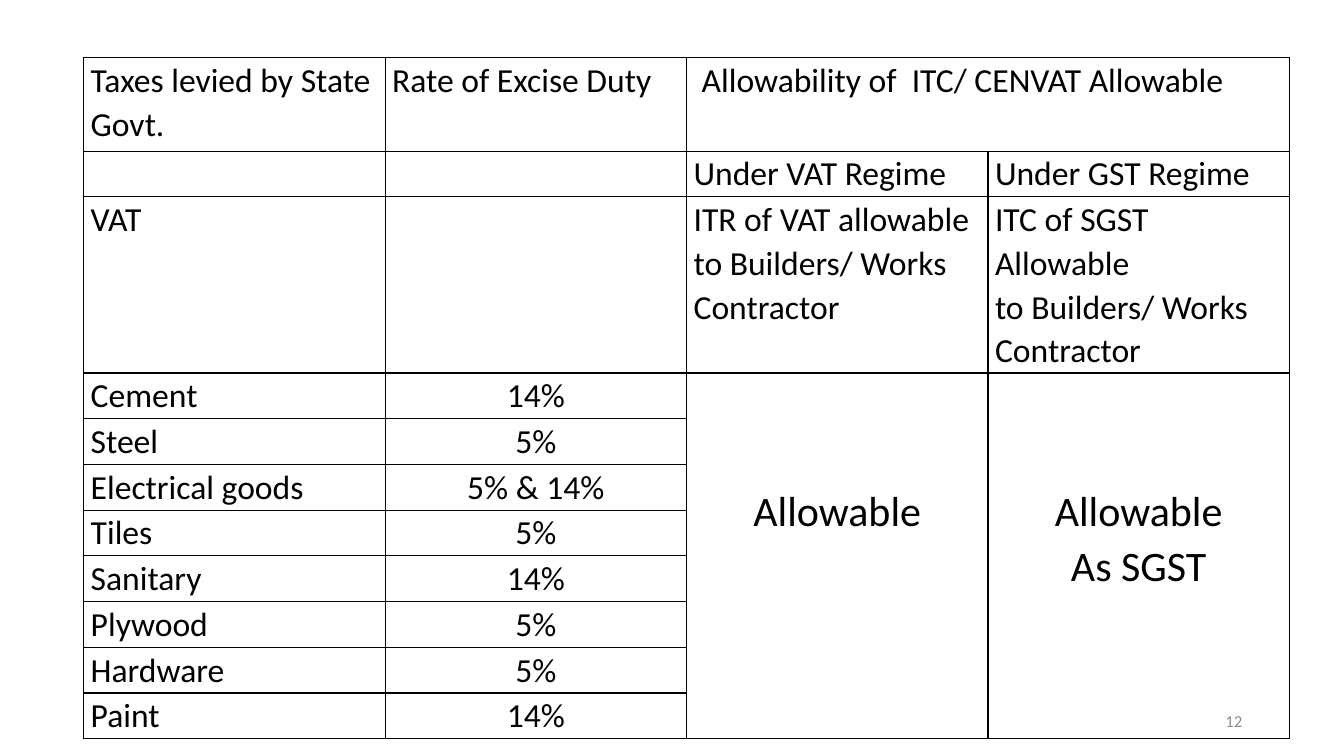
from lxml import etree
from pptx import Presentation
from pptx.dml.color import RGBColor
from pptx.enum.text import MSO_ANCHOR, PP_ALIGN
from pptx.oxml.ns import qn
from pptx.util import Inches, Pt

LEFT, CENTER, RIGHT = PP_ALIGN.LEFT, PP_ALIGN.CENTER, PP_ALIGN.RIGHT
MIDDLE = MSO_ANCHOR.MIDDLE

BLACK, GRAY = "000000", "8C8C8C"
HEADINGS = [
    ["Taxes levied by State Govt.", "Rate of Excise Duty",
     "Allowability of  ITC/ CENVAT Allowable", ""],
    ["", "", "Under VAT Regime", "Under GST Regime"],
    ["VAT", "", "ITR of VAT allowable to Builders/ Works Contractor",
     "ITC of SGST Allowable\nto Builders/ Works Contractor"],
]
GOODS = [
    ("Cement", "14%"),
    ("Steel", "5%"),
    ("Electrical goods", "5% & 14%"),
    ("Tiles", "5%"),
    ("Sanitary", "14%"),
    ("Plywood", "5%"),
    ("Hardware", "5%"),
    ("Paint", "14%"),
]
VERDICTS = {2: "Allowable", 3: "Allowable\nAs SGST"}
PAGE = "12"

X, Y, COL_W = 0.83, 0.57, 2.99
HEADING_H = [0.93, 0.45, 1.75]
GOODS_H = 3.63 / len(GOODS)
VERDICT_TOP = 1.09
COLS = len(HEADINGS[0])
FIRST = len(HEADINGS)


def color(value):
    return RGBColor.from_string(value)


def write(tf, text, size, align=LEFT, hue=BLACK, spacing=1.07):
    tf.word_wrap = True
    for i, line in enumerate(text.split("\n")):
        p = tf.paragraphs[0] if i == 0 else tf.add_paragraph()
        p.alignment, p.line_spacing = align, spacing
        r = p.add_run()
        r.text = line
        for name, value in {"name": "Calibri", "size": Pt(size)}.items():
            setattr(r.font, name, value)
        r.font.color.rgb = color(hue)


def style_cell(cell):
    margins = {"left": 0.07, "top": 0, "right": 0.07, "bottom": 0}
    for side, value in margins.items():
        setattr(cell, f"margin_{side}", Inches(value))
    tc_pr = cell._tc.get_or_add_tcPr()
    for side in "LRTB":
        ln = etree.SubElement(tc_pr, qn(f"a:ln{side}"), w=str(Pt(1)))
        fill = etree.SubElement(ln, qn("a:solidFill"))
        etree.SubElement(fill, qn("a:srgbClr"), val=BLACK)
    cell.fill.background()


prs = Presentation()
prs.slide_width, prs.slide_height = Inches(13.33), Inches(7.5)
s = prs.slides.add_slide(prs.slide_layouts[6])

heights = HEADING_H + [GOODS_H] * len(GOODS)
frame = s.shapes.add_table(len(heights), COLS, Inches(X), Inches(Y),
                           Inches(COL_W * COLS), Inches(sum(heights)))
table = frame.table
table.first_row = table.horz_banding = False
for col in table.columns:
    col.width = Inches(COL_W)
for row, height in zip(table.rows, heights):
    row.height = Inches(height)
for cell in table.iter_cells():
    style_cell(cell)

for i, row in enumerate(HEADINGS + GOODS):
    for j, text in enumerate(row):
        if text:
            align = CENTER if i >= FIRST and j == 1 else LEFT
            write(table.cell(i, j).text_frame, text, 24, align)

allowability = table.cell(0, 2)
allowability.merge(table.cell(0, 3))
allowability.margin_left = Inches(0.15)
for j, text in VERDICTS.items():
    cell = table.cell(FIRST, j)
    cell.merge(table.cell(len(heights) - 1, j))
    cell.margin_top = Inches(VERDICT_TOP)
    write(cell.text_frame, text, 30, CENTER)

sp = s.shapes.add_textbox(Inches(9.42), Inches(6.95), Inches(3), Inches(0.4))
sp.text_frame.vertical_anchor = MIDDLE
write(sp.text_frame, PAGE, 12, RIGHT, GRAY, 1.0)

prs.save("out.pptx")
